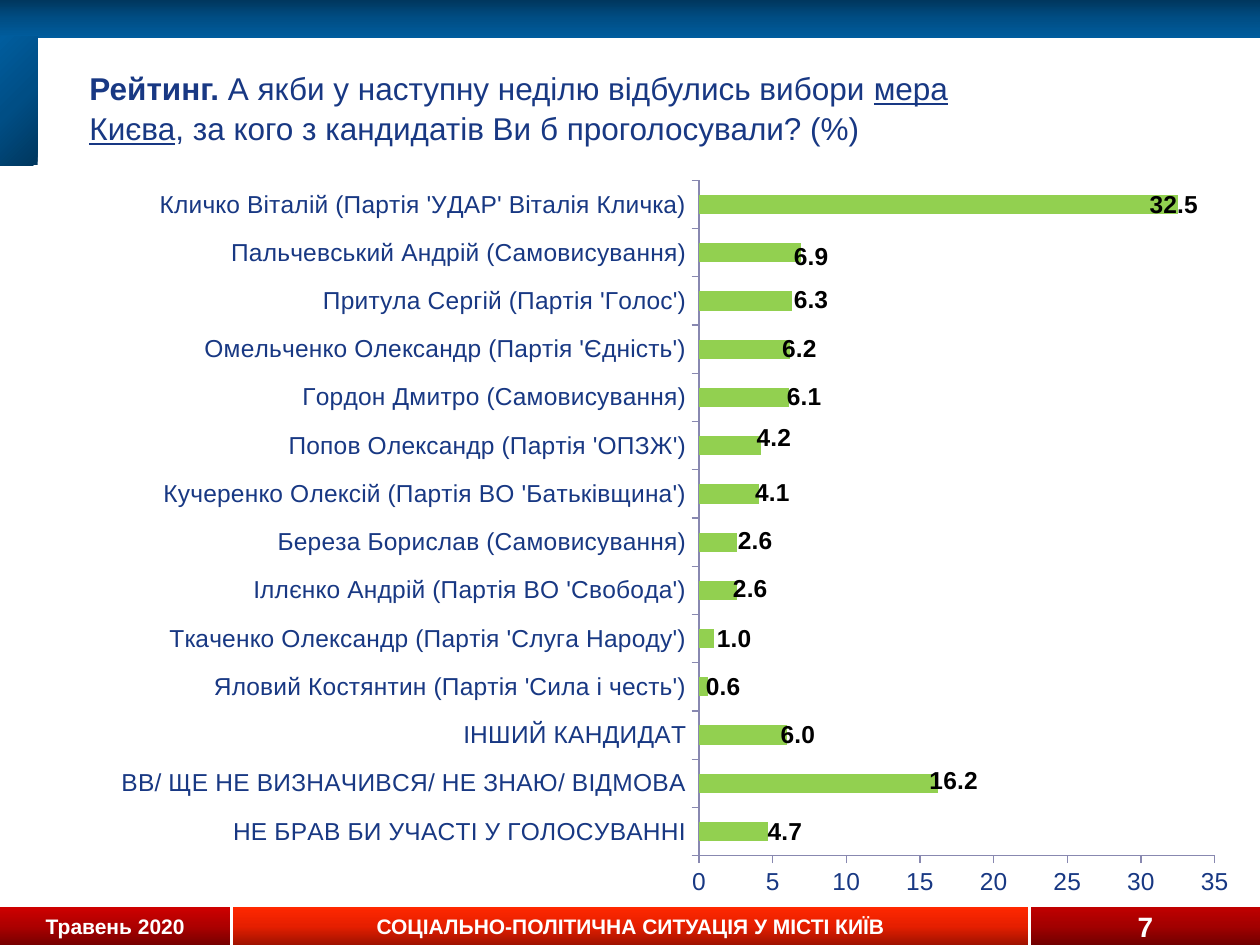
import dataclasses

import lxml.etree
import pptx
import pptx.chart.data
import pptx.dml.color
import pptx.enum.chart
import pptx.enum.shapes
import pptx.enum.text
import pptx.oxml
import pptx.oxml.ns
import pptx.util


@dataclasses.dataclass(frozen=True)
class Theme:
    """Colours, type sizes and slide size."""
    font: str = "Arial"
    navy: str = "183883"
    white: str = "FFFFFF"
    black: str = "000000"
    bar: str = "92D050"
    axis: str = "8888B0"
    blue: tuple = ("00375E", "004E85", "005D9E")
    dark_red: tuple = ("770000", "AD0000", "CE0000")
    bright_red: tuple = ("A01200", "E61F00", "FF2800")
    deep_red: tuple = ("720000", "A20000", "C00000")
    title_size: int = 18
    label_size: int = 14
    footer_size: int = 12
    number_size: int = 16
    width: float = 10
    height: float = 7.5


THEME = Theme()
CHART_BOX = (0.033, 0.177, 0.954, 0.776)
PLOT_BOX = (0.547, 0.018, 0.429, 0.921)
LABEL_FORMAT = "###0.0"

# Candidate, share of votes, label shift right and down in inches
RATINGS = [
    ("НЕ БРАВ БИ УЧАСТІ У ГОЛОСУВАННІ", 4.7, 0.31, 0),
    ("ВВ/ ЩЕ НЕ ВИЗНАЧИВСЯ/ НЕ ЗНАЮ/ ВIДМОВА", 16.2, 0.36, -0.02),
    ("ІНШИЙ КАНДИДАТ", 6, 0.26, 0),
    ("Яловий Костянтин (Партія 'Сила і честь')", 0.6, 0.3, 0),
    ("Ткаченко Олександр (Партія 'Слуга Народу')", 1, 0.34, 0),
    ("Іллєнко Андрій (Партія ВО 'Свобода')", 2.6, 0.28, -0.01),
    ("Береза Борислав (Самовисування)", 2.6, 0.32, -0.01),
    ("Кучеренко Олексій (Партія ВО 'Батьківщина')", 4.1, 0.28, -0.01),
    ("Попов Олександр (Партія 'ОПЗЖ')", 4.2, 0.28, -0.06),
    ("Гордон Дмитро (Самовисування)", 6.1, 0.3, 0),
    ("Омельченко Олександр (Партія 'Єдність')", 6.2, 0.25, 0),
    ("Притула Сергій (Партія 'Голос')", 6.3, 0.33, -0.01),
    ("Пальчевський Андрій (Самовисування)", 6.9, 0.26, 0.03),
    ("Кличко Віталій (Партія 'УДАР' Віталія Кличка)", 32.5, 0.2, 0),
]


def place(left, top, width, height):
    """Turn shares of the slide into lengths."""
    return [pptx.util.Inches(share * side) for share, side in zip(
        (left, top, width, height), (THEME.width, THEME.height) * 2)]


def set_font(font, size, colour, bold=False):
    """Apply the theme typeface with a size, colour and weight."""
    font.name, font.size, font.bold = THEME.font, pptx.util.Pt(size), bold
    font.color.rgb = pptx.dml.color.RGBColor.from_string(colour)


def fill_gradient(shape, colours, angle):
    """Fill a shape with evenly spaced stops at a clockwise angle."""
    stops = "".join(
        f'<a:gs pos="{index * 50000}"><a:srgbClr val="{colour}"/></a:gs>'
        for index, colour in enumerate(colours))
    gradient = pptx.oxml.parse_xml(
        f'<a:gradFill {pptx.oxml.ns.nsdecls("a")} rotWithShape="1"><a:gsLst>{stops}</a:gsLst>'
        f'<a:lin ang="{angle * 60000}" scaled="1"/></a:gradFill>')
    shape.fill.background()
    properties = shape._element.spPr
    properties.replace(properties.find(pptx.oxml.ns.qn("a:noFill")), gradient)


def add_band(slide, box, colours, angle, text="", size=THEME.footer_size):
    """Add a gradient rectangle with optional centred text."""
    band = slide.shapes.add_shape(pptx.enum.shapes.MSO_SHAPE.RECTANGLE, *place(*box))
    band.shadow.inherit = False
    fill_gradient(band, colours, angle)
    band.line.fill.background()
    if text:
        frame = band.text_frame
        frame.vertical_anchor = pptx.enum.text.MSO_ANCHOR.MIDDLE
        paragraph = frame.paragraphs[0]
        paragraph.text = text
        paragraph.alignment = pptx.enum.text.PP_ALIGN.CENTER
        set_font(paragraph.font, size, THEME.white, bold=True)


def add_title(slide):
    """Add the survey question with its bold and underlined parts."""
    frame = slide.shapes.add_textbox(*place(0.049, 0.047, 0.769, 0.132)).text_frame
    frame.word_wrap = True
    frame.margin_left = pptx.util.Inches(0.22)
    frame.vertical_anchor = pptx.enum.text.MSO_ANCHOR.MIDDLE
    paragraph = frame.paragraphs[0]
    paragraph.line_spacing = 1.05
    for text, bold, underline in [
        ("Рейтинг. ", True, False),
        ("А якби у наступну неділю відбулись вибори ", False, False),
        ("мера Києва", False, True),
        (", за кого з кандидатів Ви б проголосували? (%)", False, False),
    ]:
        run = paragraph.add_run()
        run.text = text
        set_font(run.font, THEME.title_size, THEME.navy, bold)
        run.font.underline = underline


def make_layout(left, top, width=None, height=None):
    """Build a manual layout, an offset or a full inner plot area."""
    values = [("x", left), ("y", top)]
    if width:
        values = [("layoutTarget", "inner"), ("xMode", "edge"), ("yMode", "edge"),
                  *values, ("w", width), ("h", height)]
    parts = "".join(f'<c:{name} val="{value}"/>' for name, value in values)
    return pptx.oxml.parse_xml(f'<c:layout {pptx.oxml.ns.nsdecls("c")}>'
                               f'<c:manualLayout>{parts}</c:manualLayout></c:layout>')


def style_axis(axis):
    """Give an axis outside ticks, a thin line and theme text."""
    axis.has_major_gridlines = False
    axis.major_tick_mark = pptx.enum.chart.XL_TICK_MARK.OUTSIDE
    axis.minor_tick_mark = pptx.enum.chart.XL_TICK_MARK.NONE
    axis.format.line.color.rgb = pptx.dml.color.RGBColor.from_string(THEME.axis)
    axis.format.line.width = pptx.util.Pt(0.75)
    set_font(axis.tick_labels.font, THEME.label_size, THEME.navy)


def style_labels(series):
    """Show bold values and shift each one from its bar's end."""
    inside_end = pptx.enum.chart.XL_LABEL_POSITION.INSIDE_END
    labels = series.data_labels
    labels.show_value = True
    labels.number_format, labels.number_format_is_linked = LABEL_FORMAT, False
    labels.position = inside_end
    set_font(labels.font, THEME.label_size, THEME.black, bold=True)
    for index in range(len(RATINGS)):
        label = series.points[index].data_label
        set_font(label.font, THEME.label_size, THEME.black, bold=True)
        label.position = inside_end
    elements = series._element.xpath("c:dLbls/c:dLbl")
    for element, (_, _, right, down) in zip(elements, RATINGS):
        layout = make_layout(round(right / (CHART_BOX[2] * THEME.width), 4),
                             round(down / (CHART_BOX[3] * THEME.height), 4))
        element.insert(1, layout)
        number_format = lxml.etree.Element(pptx.oxml.ns.qn("c:numFmt"),
                                           formatCode=LABEL_FORMAT, sourceLinked="0")
        layout.addnext(number_format)


def add_rating_chart(slide):
    """Add the bar chart of candidate ratings."""
    data = pptx.chart.data.CategoryChartData()
    data.categories = [row[0] for row in RATINGS]
    data.add_series("Series 1", [row[1] for row in RATINGS])
    chart = slide.shapes.add_chart(
        pptx.enum.chart.XL_CHART_TYPE.BAR_STACKED, *place(*CHART_BOX), data).chart
    chart.has_legend = chart.has_title = False
    set_font(chart.font, THEME.title_size, THEME.navy)
    plot = chart.plots[0]
    plot.gap_width, plot.overlap, plot.vary_by_categories = 150, 100, False
    series = plot.series[0]
    series.format.fill.solid()
    series.format.fill.fore_color.rgb = pptx.dml.color.RGBColor.from_string(THEME.bar)
    style_labels(series)
    for axis in (chart.category_axis, chart.value_axis):
        style_axis(axis)
    values = chart.value_axis
    values.minimum_scale, values.maximum_scale, values.major_unit = 0, 35, 5
    values.tick_labels.number_format = "0"
    values.tick_labels.number_format_is_linked = False
    area = plot._element.getparent()
    for layout in area.findall(pptx.oxml.ns.qn("c:layout")):
        area.remove(layout)
    area.insert(0, make_layout(*PLOT_BOX))


def main():
    """Build and save the slide."""
    presentation = pptx.Presentation()
    presentation.slide_width = pptx.util.Inches(THEME.width)
    presentation.slide_height = pptx.util.Inches(THEME.height)
    slide = presentation.slides.add_slide(presentation.slide_layouts[6])
    add_band(slide, (0, 0.96, 0.183, 0.04), THEME.dark_red, 270, "Травень 2020")
    add_band(slide, (0.185, 0.96, 0.631, 0.04), THEME.bright_red, 270,
             "СОЦІАЛЬНО-ПОЛІТИЧНА СИТУАЦІЯ У МІСТІ КИЇВ")
    add_band(slide, (0, 0, 1, 0.04), THEME.blue, 90)
    add_band(slide, (0, 0.039, 0.03, 0.136), THEME.blue, 225)
    add_title(slide)
    add_rating_chart(slide)
    add_band(slide, (0.818, 0.96, 0.182, 0.04), THEME.deep_red, 270, "7", THEME.number_size)
    presentation.save("out.pptx")


if __name__ == "__main__":
    main()
